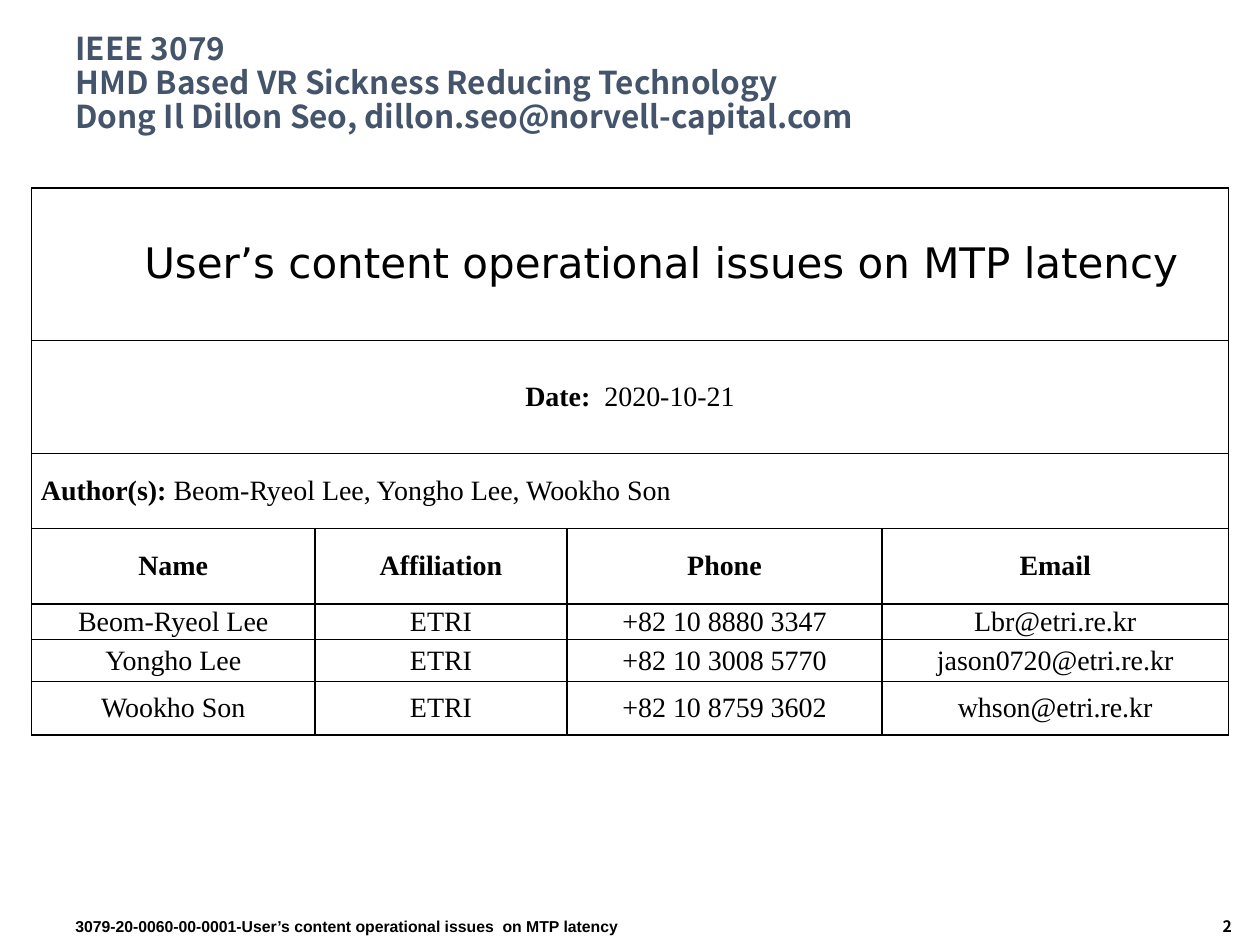
from dataclasses import dataclass
from typing import Optional

from lxml import etree
from pptx import Presentation
from pptx import util as u
from pptx.dml.color import RGBColor
from pptx.enum import text
from pptx.oxml.ns import qn

Pt = u.Pt
LEFT, CENTER, RIGHT = text.PP_ALIGN.LEFT, text.PP_ALIGN.CENTER, text.PP_ALIGN.RIGHT


@dataclass(frozen=True)
class Theme:
    ink: str = "000000"
    heading: str = "44546A"
    heading_font: str = "Noto Sans CJK KR"
    topic_font: str = "DejaVu Sans"
    table_font: str = "Times New Roman"
    footer_font: str = "Arial"
    heading_size: float = 18
    topic_size: float = 24
    table_size: float = 16
    footer_size: float = 9
    border: float = 1


THEME = Theme()


@dataclass(frozen=True)
class Run:
    words: str
    bold: bool = False
    font: str = THEME.table_font
    size: float = THEME.table_size
    color: str = THEME.ink


@dataclass(frozen=True)
class Label:
    """A text box; a line break inside its words is a vertical tab."""
    run: Run
    left: float
    top: float
    width: float
    height: float
    align: text.PP_ALIGN = LEFT
    anchor: text.MSO_ANCHOR = text.MSO_ANCHOR.TOP
    line_spacing: Optional[float] = None


@dataclass(frozen=True)
class Banner:
    """A table row merged across all columns."""
    runs: tuple
    align: text.PP_ALIGN = CENTER
    space_after: float = 0
    indent: float = 0


def write(paragraph, runs: tuple) -> None:
    for run in runs:
        for number, line in enumerate(run.words.split("\v")):
            if number:
                paragraph.add_line_break()
            part = paragraph.add_run()
            part.text = line
            styles = {"name": run.font, "size": Pt(run.size), "bold": run.bold}
            for key, value in styles.items():
                setattr(part.font, key, value)
            part.font.color.rgb = RGBColor.from_string(run.color)
            etree.SubElement(part.font._element, qn("a:ea"), typeface=run.font)


def draw_label(slide, label: Label) -> None:
    box = slide.shapes.add_textbox(
        Pt(label.left), Pt(label.top), Pt(label.width), Pt(label.height))
    frame = box.text_frame
    frame.word_wrap = True
    frame.vertical_anchor = label.anchor
    paragraph = frame.paragraphs[0]
    paragraph.alignment = label.align
    if label.line_spacing:
        paragraph.line_spacing = label.line_spacing
    write(paragraph, (label.run,))


def style_cell(cell) -> None:
    margins = {"margin_left": 5.4, "margin_right": 5.4, "margin_top": 0, "margin_bottom": 0}
    for key, value in margins.items():
        setattr(cell, key, Pt(value))
    cell.vertical_anchor = text.MSO_ANCHOR.MIDDLE
    properties = cell._tc.get_or_add_tcPr()
    for side in ("lnL", "lnR", "lnT", "lnB"):
        line = etree.SubElement(properties, qn(f"a:{side}"), w=str(Pt(THEME.border)))
        fill = etree.SubElement(line, qn("a:solidFill"))
        etree.SubElement(fill, qn("a:srgbClr"), val=THEME.ink)
    cell.fill.background()


def draw_table(slide, left: float, top: float, columns: tuple, heights: tuple,
               banners: tuple, records: tuple) -> None:
    table = slide.shapes.add_table(
        len(heights), len(columns), Pt(left), Pt(top),
        Pt(sum(columns)), Pt(sum(heights))).table
    table.first_row = table.horz_banding = False
    for column, width in zip(table.columns, columns):
        column.width = Pt(width)
    for row, height in zip(table.rows, heights):
        row.height = Pt(height)
    for cell in table.iter_cells():
        style_cell(cell)

    # Merged rows
    for number, banner in enumerate(banners):
        cell = table.cell(number, 0)
        cell.merge(table.cell(number, len(columns) - 1))
        paragraph = cell.text_frame.paragraphs[0]
        paragraph.alignment = banner.align
        paragraph.space_after = Pt(banner.space_after)
        if banner.indent:
            paragraph._p.get_or_add_pPr().set("marL", str(Pt(banner.indent)))
        write(paragraph, banner.runs)

    # Column heads, then one row per author
    for number, record in enumerate(records):
        for column, words in enumerate(record):
            paragraph = table.cell(len(banners) + number, column).text_frame.paragraphs[0]
            paragraph.alignment = CENTER
            write(paragraph, (Run(words, bold=number == 0),))


BANNERS = (
    Banner((Run("User’s content operational issues on MTP latency",
                font=THEME.topic_font, size=THEME.topic_size),),
           space_after=12, indent=36),
    Banner((Run("Date:", bold=True), Run("  2020-10-21")), space_after=12),
    Banner((Run("Author(s): ", bold=True),
            Run("Beom-Ryeol Lee, Yongho Lee, Wookho Son")), align=LEFT),
)
AUTHORS = (
    ("Name", "Affiliation", "Phone", "Email"),
    ("Beom-Ryeol Lee", "ETRI", "+82 10 8880 3347", "Lbr@etri.re.kr"),
    ("Yongho Lee", "ETRI", "+82 10 3008 5770", "jason0720@etri.re.kr"),
    ("Wookho Son", "ETRI", "+82 10 8759 3602", "whson@etri.re.kr"),
)
LABELS = (
    Label(Run("IEEE 3079\vHMD Based VR Sickness Reducing Technology\v"
              "Dong Il Dillon Seo, dillon.seo@norvell-capital.com",
              True, THEME.heading_font, THEME.heading_size, THEME.heading),
          36, 12, 648, 72, anchor=text.MSO_ANCHOR.MIDDLE, line_spacing=0.9),
    Label(Run("2", True, THEME.heading_font, THEME.footer_size),
          594, 520.5, 117, 19.5, align=RIGHT),
    Label(Run("3079-20-0060-00-0001-User’s content operational issues  on MTP latency",
              True, THEME.footer_font, THEME.footer_size),
          36, 520.5, 528, 19.5),
)


def main() -> None:
    deck = Presentation()
    deck.slide_width, deck.slide_height = Pt(720), Pt(540)
    slide = deck.slides.add_slide(deck.slide_layouts[6])
    draw_table(slide, 18, 107.5, (162, 144, 180, 198),
               (87, 64.6, 43, 43, 20.5, 24, 30.5), BANNERS, AUTHORS)
    for label in LABELS:
        draw_label(slide, label)
    deck.save("out.pptx")


if __name__ == "__main__":
    main()
